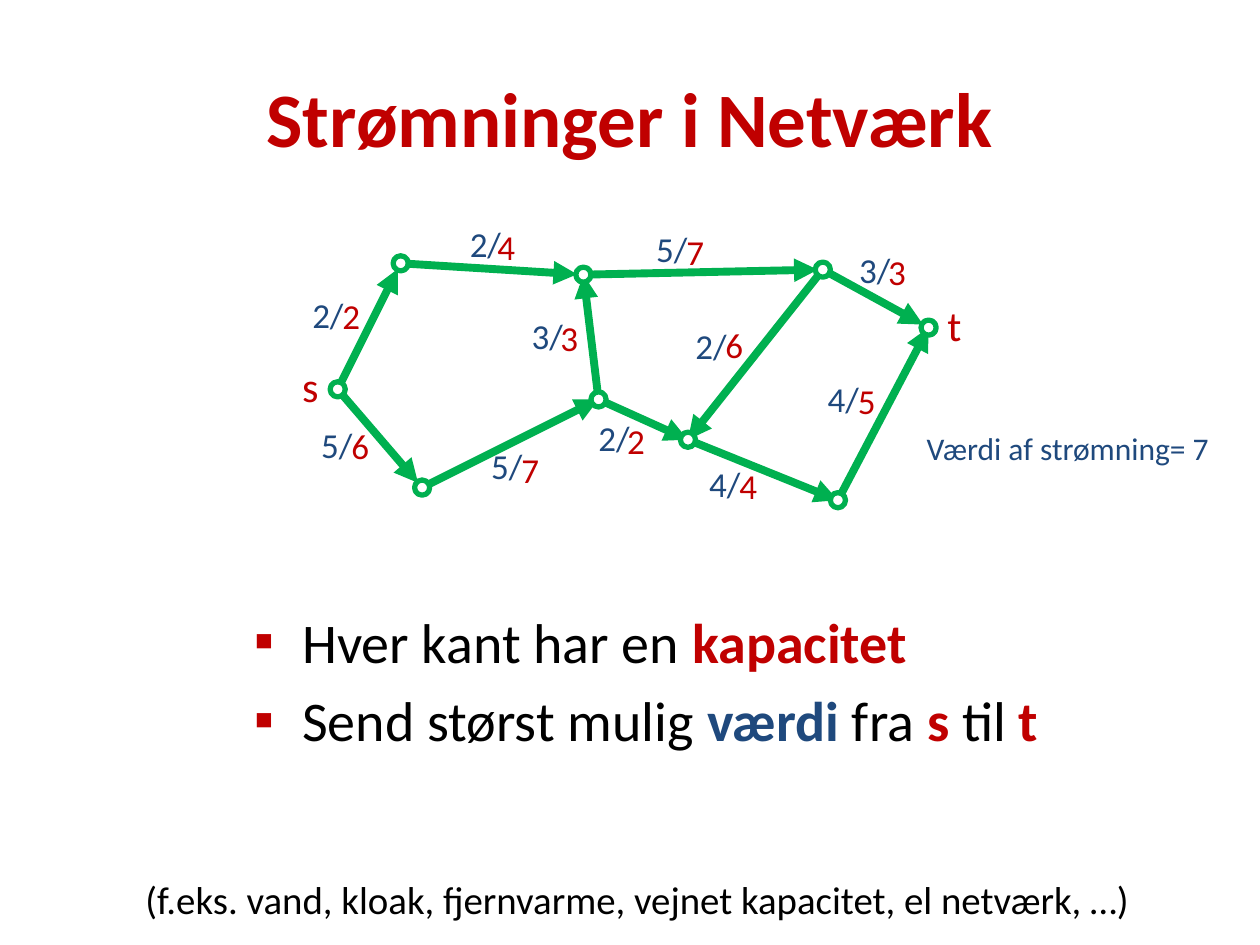
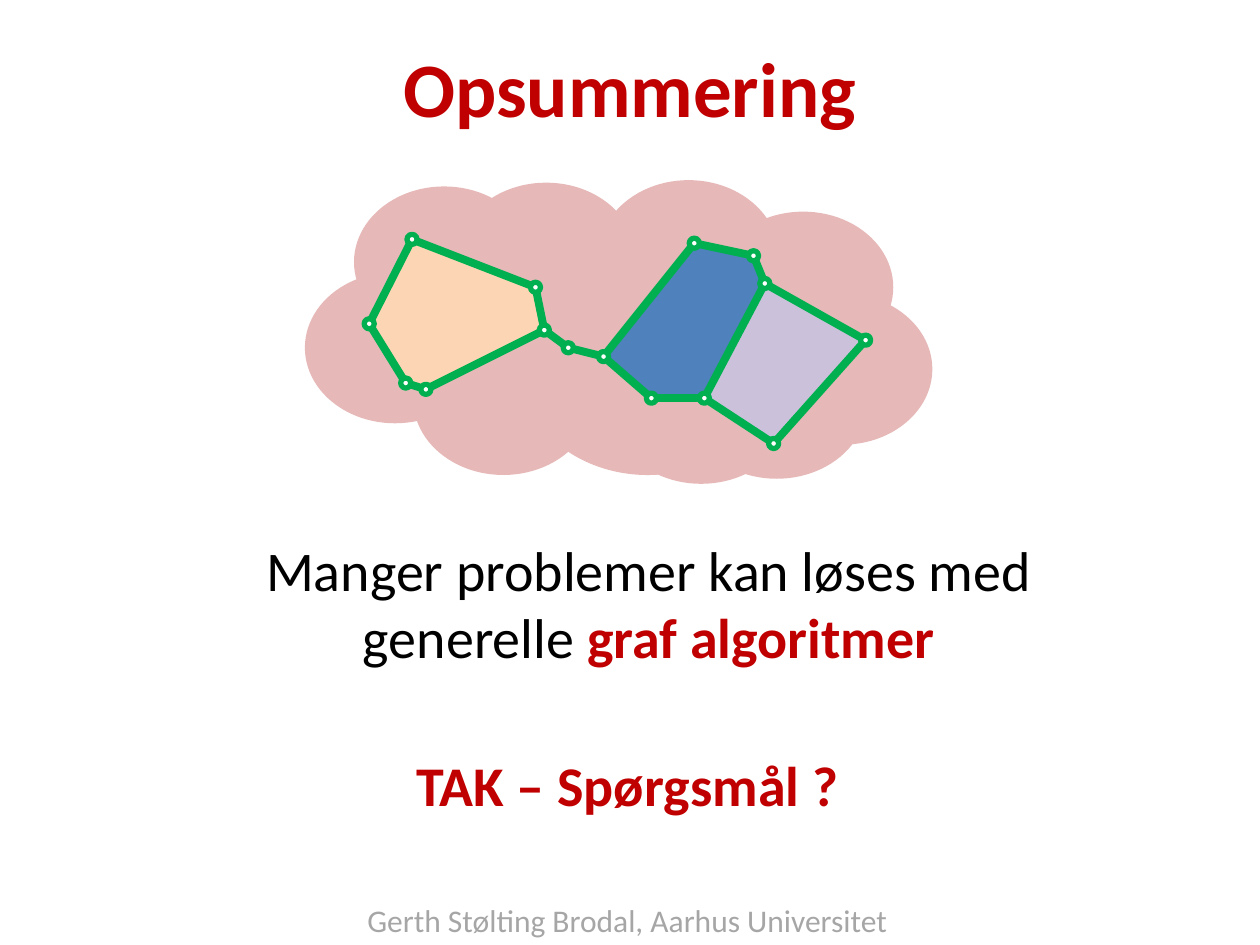
import math
from dataclasses import dataclass

import lxml.etree
import pptx
import pptx.dml.color
import pptx.enum.shapes
import pptx.enum.text
import pptx.oxml.ns
import pptx.util

Inches = pptx.util.Inches
Pt = pptx.util.Pt
Align = pptx.enum.text.PP_ALIGN
Anchor = pptx.enum.text.MSO_ANCHOR
Kind = pptx.enum.shapes.MSO_SHAPE
qn = pptx.oxml.ns.qn


@dataclass(frozen=True)
class Theme:
    font: str = "Calibri"
    red: str = "C00000"
    navy: str = "1F497D"
    green: str = "00B050"
    black: str = "000000"
    white: str = "FFFFFF"
    gray: str = "A6A6A6"
    pink: str = "E6B9B8"
    peach: str = "FCD5B5"
    blue: str = "4F81BD"
    lilac: str = "CCC1DA"
    title: float = 44
    body: float = 32
    mark: float = 24
    note: float = 22.2
    label: float = 20
    small: float = 18
    edge: float = 4.5
    ring: float = 3


T = Theme()

# Flow network: node centres
NET = {
    "s": (2.68, 3.09), "a": (3.18, 2.09), "b": (3.35, 3.87),
    "c": (4.63, 2.18), "d": (6.53, 2.14), "e": (4.75, 3.17),
    "f": (5.46, 3.49), "g": (6.65, 3.97), "t": (7.37, 2.6),
}
# From, to, gap before the tip, flow and its corner, capacity and its corner
FLOWS = [
    ("b", "e", 0, 5, (3.8, 3.48), 7, (4.04, 3.51)),
    ("s", "b", 0.05, 5, (2.45, 3.31), 6, (2.69, 3.32)),
    ("s", "a", 0.05, 2, (2.38, 2.28), 2, (2.62, 2.29)),
    ("a", "c", 0.05, 2, (3.63, 1.72), 4, (3.85, 1.74)),
    ("e", "f", 0, 2, (4.65, 3.26), 2, (4.88, 3.28)),
    ("e", "c", 0, 3, (4.12, 2.45), 3, (4.35, 2.46)),
    ("c", "d", 0.04, 5, (5.11, 1.76), 7, (5.35, 1.78)),
    ("d", "t", 0.05, 3, (6.72, 1.92), 3, (6.95, 1.94)),
    ("d", "f", 0, 2, (5.42, 2.53), 6, (5.66, 2.52)),
    ("f", "g", 0, 4, (5.53, 3.62), 4, (5.77, 3.64)),
    ("g", "t", 0, 4, (6.47, 2.95), 5, (6.71, 2.96)),
]

# Summary graph: node centres, filled faces and the path between them
GRAPH = {
    "a": (2.93, 2.57), "b": (3.27, 1.9), "c": (4.25, 2.28),
    "d": (4.32, 2.62), "e": (3.38, 3.09), "f": (3.22, 3.04),
    "g": (4.51, 2.76), "h": (4.79, 2.83), "i": (5.51, 1.93),
    "j": (5.98, 2.03), "k": (6.07, 2.25), "l": (5.59, 3.16),
    "m": (5.17, 3.16), "n": (6.87, 2.7), "o": (6.14, 3.52),
}
FACES = [("abcdef", T.peach), ("hijklm", T.blue), ("knol", T.lilac)]
BRIDGE = "dgh"

# Cloud: corners of the equal puffs, and one large core
PUFFS = [(5.97, 2.33), (2.81, 1.48), (3.62, 1.45), (4.75, 1.43), (5.66, 1.68),
         (5.45, 2.6), (4.85, 2.64), (3.28, 2.57), (2.42, 2.16)]
PUFF = (1.43, 1.2)
CORE = (4.13, 2.08, 2.02, 1.69)


def rgb(hue):
    return pptx.dml.color.RGBColor.from_string(hue)


def paint(shape, fill, line=None, width=0):
    shape.shadow.inherit = False
    shape.fill.solid()
    shape.fill.fore_color.rgb = rgb(fill)
    if line:
        shape.line.color.rgb = rgb(line)
        shape.line.width = Pt(width)
    else:
        shape.line.fill.background()


def bullet(para):
    props = para._p.get_or_add_pPr()
    props.set("marL", str(Inches(0.38)))
    props.set("indent", str(Inches(-0.38)))
    hue = lxml.etree.SubElement(props, qn("a:buClr"))
    lxml.etree.SubElement(hue, qn("a:srgbClr")).set("val", T.red)
    lxml.etree.SubElement(props, qn("a:buFont")).set("typeface", T.font)
    lxml.etree.SubElement(props, qn("a:buChar")).set("char", "▪")


def text(slide, box, paras, size, align=Align.LEFT, anchor=Anchor.TOP, dots=False):
    """Each paragraph is a list of runs: (words, colour, bold)."""
    frame = slide.shapes.add_textbox(*map(Inches, box)).text_frame
    frame.word_wrap = True
    frame.vertical_anchor = anchor
    for i, runs in enumerate(paras):
        para = frame.add_paragraph() if i else frame.paragraphs[0]
        para.alignment = align
        if i:
            para.space_before = Pt(size * 0.2)
        if dots:
            bullet(para)
        for words, hue, bold in runs:
            run = para.add_run()
            run.text = words
            run.font.name = T.font
            run.font.size = Pt(size)
            run.font.bold = bold
            run.font.color.rgb = rgb(hue)


def line(slide, words, box, size, hue, bold=False, align=Align.CENTER):
    text(slide, box, [[(words, hue, bold)]], size, align)


def title(slide, words, top):
    text(slide, (0.5, top, 9, 1.25), [[(words, T.red, True)]], T.title,
         Align.CENTER, Anchor.MIDDLE)


def edge(slide, start, end, gap=0, arrow=False):
    part = 1 - gap / math.dist(start, end)
    tip = [p + (q - p) * part for p, q in zip(start, end)]
    link = slide.shapes.add_connector(
        pptx.enum.shapes.MSO_CONNECTOR.STRAIGHT, *map(Inches, (*start, *tip)))
    link.line.color.rgb = rgb(T.green)
    link.line.width = Pt(T.edge)
    if arrow:
        head = lxml.etree.SubElement(link.line._get_or_add_ln(), qn("a:tailEnd"))
        head.set("type", "triangle")
    lxml.etree.SubElement(link._element.spPr, qn("a:effectLst"))


def oval(slide, box, fill, *rim):
    paint(slide.shapes.add_shape(Kind.OVAL, *map(Inches, box)), fill, *rim)


def node(slide, centre, size):
    x, y = centre
    oval(slide, (x - size / 2, y - size / 2, size, size), T.white, T.green, T.ring)


def face(slide, points, fill):
    first, *rest = [tuple(map(Inches, p)) for p in points]
    pen = slide.shapes.build_freeform(*first)
    pen.add_line_segments(rest, close=True)
    paint(pen.convert_to_shape(), fill)


def label(slide, words, corner, hue, width=0.34, size=T.label):
    line(slide, words, (*corner, width, size * 0.02), size, hue, align=Align.LEFT)


def network(slide):
    # Flow values lie behind the edges
    for *_, flow, corner, _, _ in FLOWS:
        label(slide, f"{flow}/", corner, T.navy, 0.65)
    title(slide, "Strømninger i Netværk", 0.3)
    # Explanation
    text(slide, (1.92, 4.77, 6.63, 1.31), [
        [("Hver kant har en ", T.black, False), ("kapacitet", T.red, True)],
        [("Send størst mulig ", T.black, False), ("værdi ", T.navy, True),
         ("fra ", T.black, False), ("s", T.red, True),
         (" til ", T.black, False), ("t", T.red, True)],
    ], T.body, dots=True)
    # Edges and nodes
    for start, end, gap, *_ in FLOWS:
        edge(slide, NET[start], NET[end], gap, True)
    for centre in NET.values():
        node(slide, centre, 0.12)
    # Source, sink and capacities
    label(slide, "s", (2.3, 2.81), T.red, size=T.mark)
    label(slide, "t", (7.42, 2.33), T.red, size=T.mark)
    for *_, cap, corner in FLOWS:
        label(slide, str(cap), corner, T.red)
    line(slide, "Værdi af strømning= 7", (6.99, 3.36, 2.97, 0.4), T.small, T.navy)
    line(slide, "(f.eks. vand, kloak, fjernvarme, vejnet kapacitet, el netværk, …)",
         (0.75, 6.9, 8.62, 0.55), T.note, T.black)


def summary(slide):
    title(slide, "Opsummering", 0.06)
    line(slide, "TAK – Spørgsmål ?", (1.24, 5.91, 7.48, 0.58), T.body, T.red, True)
    # Cloud
    for corner in PUFFS:
        oval(slide, corner + PUFF, T.pink)
    oval(slide, CORE, T.pink)
    # Graph: faces, their outlines (shared sides once), bridge, nodes
    for names, fill in FACES:
        face(slide, [GRAPH[n] for n in names], fill)
    pairs = {tuple(sorted(p)) for names, _ in FACES
             for p in zip(names, names[1:] + names[0])}
    pairs.update(zip(BRIDGE, BRIDGE[1:]))
    for start, end in sorted(pairs):
        edge(slide, GRAPH[start], GRAPH[end])
    for centre in GRAPH.values():
        node(slide, centre, 0.08)
    # Closing words
    text(slide, (1.41, 4.2, 7.48, 1.2), [
        [("Manger problemer kan løses med generelle ", T.black, False),
         ("graf algoritmer", T.red, True)],
    ], T.body, Align.CENTER)
    line(slide, "Gerth Stølting Brodal, Aarhus Universitet",
         (-0.02, 7.1, 10, 0.4), T.small, T.gray)


def main():
    deck = pptx.Presentation()
    deck.slide_width, deck.slide_height = Inches(10), Inches(7.5)
    for build in (network, summary):
        build(deck.slides.add_slide(deck.slide_layouts[6]))
    deck.save("out.pptx")


if __name__ == "__main__":
    main()
